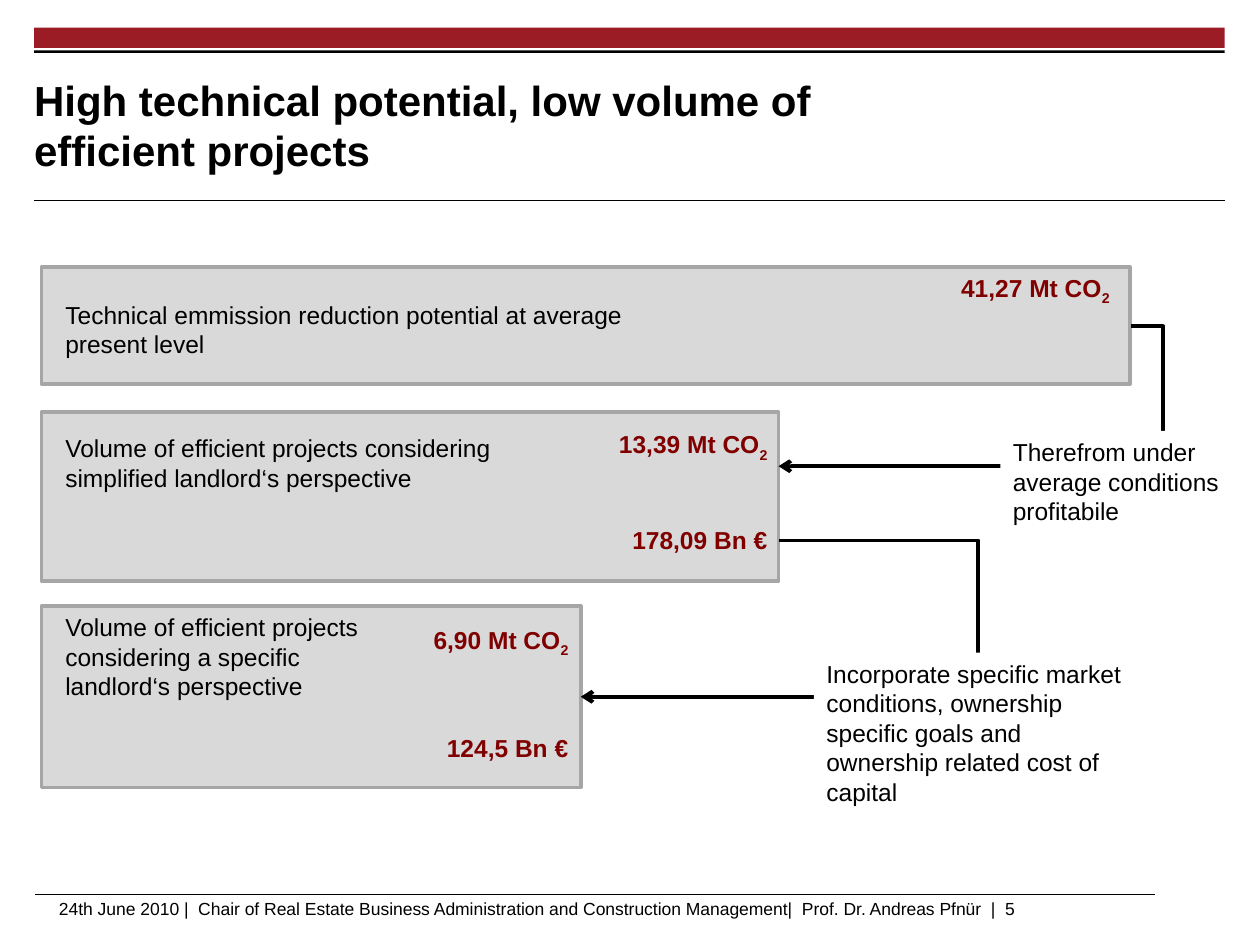
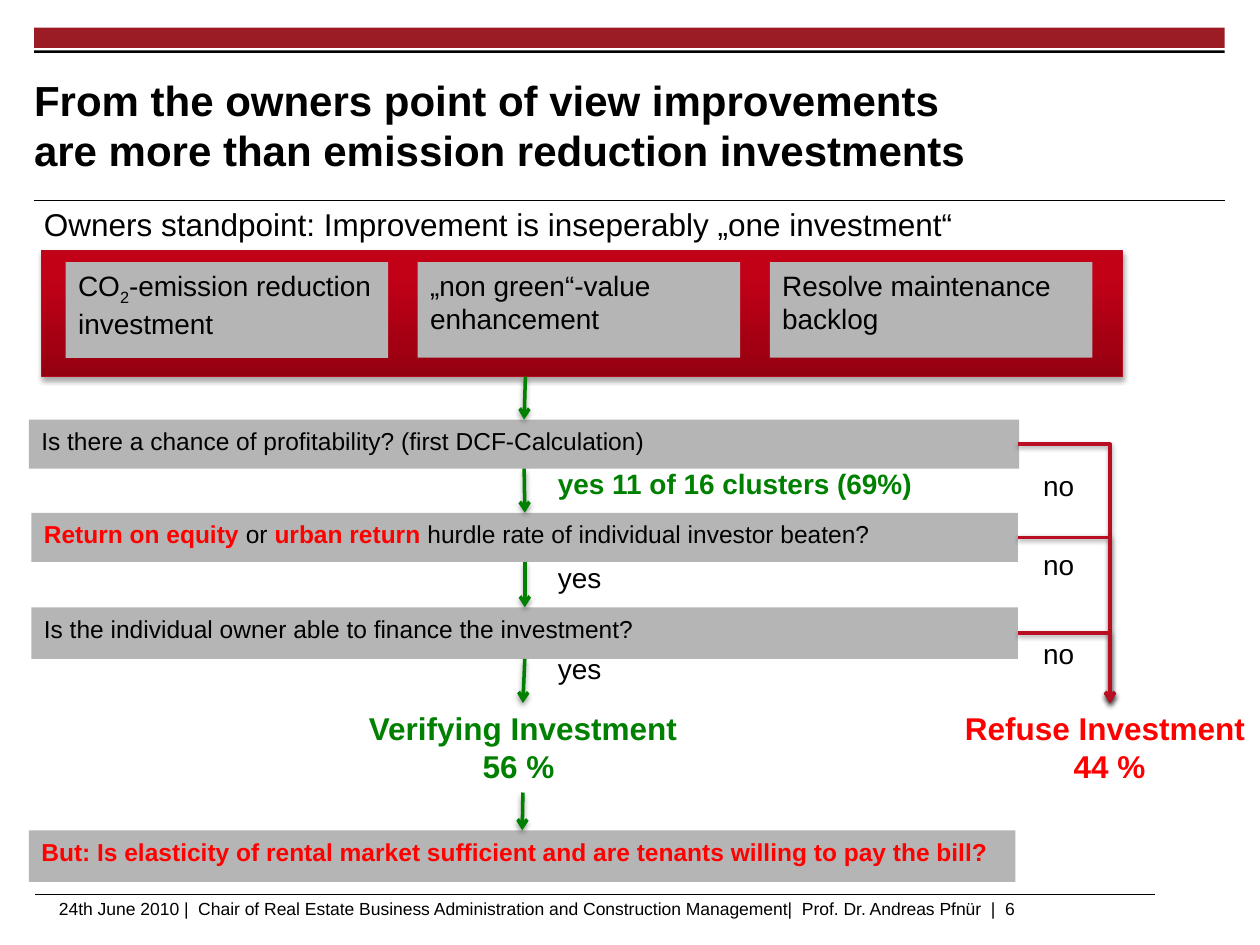
from lxml import etree
from pptx import Presentation
from pptx.dml.color import RGBColor
from pptx.enum.shapes import MSO_CONNECTOR, MSO_SHAPE
from pptx.enum.text import MSO_ANCHOR, MSO_AUTO_SIZE, PP_ALIGN
from pptx.oxml.ns import qn
from pptx.util import Inches, Pt

RECTANGLE = MSO_SHAPE.RECTANGLE
STRAIGHT, ELBOW = MSO_CONNECTOR.STRAIGHT, MSO_CONNECTOR.ELBOW
LEFT, CENTER, RIGHT = PP_ALIGN.LEFT, PP_ALIGN.CENTER, PP_ALIGN.RIGHT
TOP, MIDDLE = MSO_ANCHOR.TOP, MSO_ANCHOR.MIDDLE
NO_AUTOSIZE = MSO_AUTO_SIZE.NONE
TOP_SIDE, BOTTOM_SIDE = 0, 2

TITLE_ONLY, TITLE_AND_BODY = 5, 1
FONT = "Arial"
BLACK, WHITE = "000000", "FFFFFF"
BAND_RED, DARK_RED, RED, LINE_RED = "9C1C26", "800000", "FF0000", "B90F22"
GREEN = "008000"
BAR_GREY, BAR_EDGE, BOX_GREY = "D9D9D9", "A6A6A6", "B5B5B5"
FOOTER = ("24th June 2010 |  Chair of Real Estate Business Administration and "
          "Construction Management|  Prof. Dr. Andreas Pfnür  |  {}")


def rgb(color):
    return RGBColor.from_string(color)


class Builder:
    """Holds the deck, its style and the slide being filled."""

    def __init__(self):
        self.deck = Presentation()
        self.deck.slide_width, self.deck.slide_height = Inches(10), Inches(7.5)
        self.page = None

    def new_page(self, layout, title, number):
        self.page = self.deck.slides.add_slide(self.deck.slide_layouts[layout])
        # Bands and rules
        self.box((0.27, 0.22, 9.45, 0.16), BAND_RED)
        self.box((0.27, 0.4, 9.45, 0.02), BLACK)
        self.line((0.27, 1.59), (9.72, 1.59), BLACK, 0.6)
        self.line((0.28, 7.1), (9.17, 7.1), BLACK, 0.6)
        # Title and footer
        heading = self.page.shapes.title
        self.place(heading, (0.27, 0.53, 7.52, 0.92))
        self.fill_text(heading, [title], 24, bold=True, anchor=MIDDLE,
                       inset=False)
        self.text((0.37, 7.08, 9.33, 0.25), [FOOTER.format(number)], 10)

    def place(self, shape, area):
        shape.left, shape.top, shape.width, shape.height = map(Inches, area)

    def fill_text(self, shape, paragraphs, size, color=BLACK, bold=False,
                  align=LEFT, anchor=TOP, wrap=True, inset=True):
        """Each paragraph is a string or a list of (text, mark) spans;
        the mark is "", "sub" (subscript) or "key" (bold red)."""
        frame = shape.text_frame
        frame.auto_size, frame.word_wrap = NO_AUTOSIZE, wrap
        frame.vertical_anchor = anchor
        frame.margin_left = frame.margin_right = Inches(0.1 if inset else 0)
        frame.margin_top = frame.margin_bottom = Inches(0.05 if inset else 0)
        for index, content in enumerate(paragraphs):
            para = frame.add_paragraph() if index else frame.paragraphs[0]
            para.alignment, para.space_before = align, Pt(0)
            spans = [(content, "")] if isinstance(content, str) else content
            for text, mark in spans:
                span = para.add_run()
                span.text = text
                font = span.font
                font.name, font.size = FONT, Pt(size)
                font.bold = bold or mark == "key"
                font.color.rgb = rgb(RED if mark == "key" else color)
                if mark == "sub":
                    span._r.get_or_add_rPr().set("baseline", "-25000")

    def text(self, area, paragraphs, size, **style):
        box = self.page.shapes.add_textbox(*map(Inches, area))
        self.fill_text(box, paragraphs, size, **style)
        return box

    def box(self, area, fill, edge=None, weight=2):
        box = self.page.shapes.add_shape(RECTANGLE, *map(Inches, area))
        box.shadow.inherit = False
        box.fill.solid()
        box.fill.fore_color.rgb = rgb(fill)
        if edge:
            box.line.color.rgb = rgb(edge)
            box.line.width = Pt(weight)
        else:
            box.line.fill.background()
        return box

    def text_box(self, area, fill, paragraphs, size, **style):
        box = self.box(area, fill)
        self.fill_text(box, paragraphs, size, **style)
        return box

    def body(self, area, fill, paragraphs, size):
        """Fill the body placeholder, without bullets, in front of the rest."""
        body = self.page.placeholders[1]
        self.place(body, area)
        body.fill.solid()
        body.fill.fore_color.rgb = rgb(fill)
        for para in body.text_frame.paragraphs:
            properties = para._p.get_or_add_pPr()
            properties.set("marL", "0")
            properties.set("indent", "0")
            etree.SubElement(properties, qn("a:buNone"))
        self.fill_text(body, paragraphs, size)
        body.element.getparent().append(body.element)

    def drop_shadow(self, shape, opacity, distance):
        properties = shape.element.spPr
        effects = properties.find(qn("a:effectLst"))
        shadow = etree.SubElement(
            effects, qn("a:outerShdw"), blurRad=str(Pt(3.1)),
            dist=str(Pt(distance)), dir="5400000", rotWithShape="0")
        shade = etree.SubElement(shadow, qn("a:srgbClr"), val=BLACK)
        etree.SubElement(shade, qn("a:alpha"), val=str(opacity * 1000))

    def line(self, start, end, color, weight, kind=STRAIGHT, arrow=False):
        line = self.page.shapes.add_connector(
            kind, *map(Inches, (*start, *end)))
        line.line.color.rgb = rgb(color)
        line.line.width = Pt(weight)
        properties = line.element.spPr
        if arrow:
            etree.SubElement(properties.find(qn("a:ln")), qn("a:tailEnd"),
                             type="arrow")
        etree.SubElement(properties, qn("a:effectLst"))
        return line

    def elbow(self, start, end, color, weight, bend=None):
        """With a bend (share of the width) two corners, otherwise one."""
        line = self.line(start, end, color, weight, ELBOW, arrow=True)
        geometry = line.element.spPr.find(qn("a:prstGeom"))
        if bend is None:
            geometry.set("prst", "bentConnector2")
        else:
            guides = geometry.find(qn("a:avLst"))
            if guides is None:
                guides = etree.SubElement(geometry, qn("a:avLst"))
            etree.SubElement(guides, qn("a:gd"), name="adj1",
                             fmla=f"val {round(bend * 100000)}")
        return line

    def green_arrow(self, start, end, upper=None, lower=None):
        arrow = self.line(start, end, GREEN, 2, arrow=True)
        if upper is not None:
            arrow.begin_connect(upper, BOTTOM_SIDE)
        if lower is not None:
            arrow.end_connect(lower, TOP_SIDE)
        self.drop_shadow(arrow, 38, 1.6)


def build_potential(builder):
    builder.new_page(TITLE_ONLY, "High technical potential, low volume of "
                     "efficient projects", 5)

    # Bars, narrowing from potential to efficient volume
    for top, width, height in ((3.27, 5.85, 1.34), (4.81, 4.28, 1.44),
                               (2.12, 8.64, 0.93)):
        builder.box((0.33, top, width, height), BAR_GREY, BAR_EDGE)

    # Bar descriptions
    descriptions = (
        (2.33, 4.75, 0.57, ["Technical emmission reduction potential at "
                            "average present level"]),
        (3.39, 5.76, 0.57, ["Volume of efficient projects considering",
                            "simplified landlord‘s perspective"]),
        (4.81, 2.9, 0.81, ["Volume of efficient projects considering a "
                           "specific landlord‘s perspective"]),
    )
    for top, width, height, lines in descriptions:
        builder.text((0.42, top, width, height), lines, 14)

    # Emission and money values
    values = (
        (7.53, 2.12, 1.44, LEFT, [("41,27 Mt CO", ""), ("2", "sub")]),
        (4.64, 3.36, 1.55, RIGHT, [("13,39 Mt CO", ""), ("2", "sub")]),
        (3.32, 4.91, 1.29, RIGHT, [("6,90 Mt CO", ""), ("2", "sub")]),
        (4.62, 4.12, 1.57, RIGHT, "178,09 Bn €"),
        (3.28, 5.77, 1.33, RIGHT, "124,5 Bn €"),
    )
    for left, top, width, align, value in values:
        builder.text((left, top, width, 0.34), [value], 14, color=DARK_RED,
                     bold=True, align=align)

    # Steps between the bars, with their notes in front
    builder.elbow((8.98, 2.59), (6.18, 3.7), BLACK, 2.25, bend=-0.09)
    builder.elbow((6.18, 4.29), (4.61, 5.53), BLACK, 2.25, bend=-1.01)
    builder.text_box((7.94, 3.42, 2.06, 0.81), WHITE,
                     ["Therefrom under average conditions profitabile"], 14)
    builder.text_box((6.46, 5.18, 2.65, 1.28), WHITE,
                     ["Incorporate specific market",
                      "conditions, ownership specific goals and ownership "
                      "related cost of capital"], 14)


def build_decision(builder):
    builder.new_page(TITLE_AND_BODY, "From the owners point of view "
                     "improvements are more than emission reduction "
                     "investments", 6)
    builder.text((0.25, 1.58, 7.48, 0.4),
                 ["Owners standpoint: Improvement is inseperably "
                  "„one investment“"], 18, wrap=False)

    # Red panel with the three parts of the investment
    panel = builder.box((0.33, 1.99, 8.58, 1), RED, "B90B1E", 0.75)
    panel.fill.gradient()
    panel.fill.gradient_angle = 90
    stops = panel.fill.gradient_stops
    for stop, color, position in zip(stops, ("950011", "C20016"), (0, 0.8)):
        stop.color.rgb = rgb(color)
        stop.position = position
    builder.drop_shadow(panel, 35, 1.8)
    part_areas = [(0.52 + 2.795 * index, 2.08, 2.56, 0.76)
                  for index in range(3)]
    builder.body(part_areas[0], BOX_GREY,
                 [[("CO", ""), ("2", "sub"),
                   ("-emission reduction investment", "")]], 16)
    for area, part in zip(part_areas[1:], ("„non green“-value enhancement",
                                           "Resolve maintenance backlog")):
        builder.text_box(area, BOX_GREY, [part], 16)

    # Questions
    questions = (
        ((0.23, 3.33, 7.86, 0.39),
         "Is there a chance of profitability? (first DCF-Calculation)"),
        ((0.25, 4.07, 7.83, 0.39),
         [("Return on equity ", "key"), ("or ", ""), ("urban return ", "key"),
          ("hurdle rate of individual investor beaten?", "")]),
        ((0.25, 4.82, 7.83, 0.41),
         "Is the individual owner able to finance the investment?"),
        ((0.23, 6.59, 7.83, 0.41),
         [("But: Is elasticity of rental market sufficient and are tenants "
           "willing to pay the bill?", "key")]),
    )
    chance, hurdle, finance, tenants = [
        builder.text_box(area, BOX_GREY, [question], 14)
        for area, question in questions]

    # Outcomes
    verifying = builder.text((2.69, 5.58, 2.92, 0.71),
                             ["Verifying Investment 56 % "], 18, color=GREEN,
                             bold=True, align=CENTER)
    builder.text((7.58, 5.58, 2.45, 0.71), ["Refuse Investment ", "44 %"], 18,
                 color=RED, bold=True, align=CENTER, wrap=False)

    # Yes path
    builder.green_arrow((4.17, 2.99), (4.16, 3.33), lower=chance)
    chain = (chance, hurdle, finance, verifying, tenants)
    for upper, lower in zip(chain, chain[1:]):
        builder.green_arrow((4.16, 4), (4.16, 4.3), upper, lower)
    builder.text((4.33, 3.65, 3.4, 0.37), ["yes 11 of 16 clusters (69%)"], 16,
                 color=GREEN, bold=True)
    for top in (4.4, 5.12):
        builder.text((4.33, top, 0.57, 0.37), ["yes"], 16)

    # No path
    for (_, top, _, height), _ in questions[:3]:
        arrow = builder.elbow((8.08, top + height / 2), (8.81, 5.58),
                              LINE_RED, 2)
        builder.drop_shadow(arrow, 38, 1.6)
    for top in (3.67, 4.3, 5):
        builder.text((8.18, top, 0.57, 0.37), ["no"], 16)


def main():
    builder = Builder()
    build_potential(builder)
    build_decision(builder)
    builder.deck.save("out.pptx")


if __name__ == "__main__":
    main()
